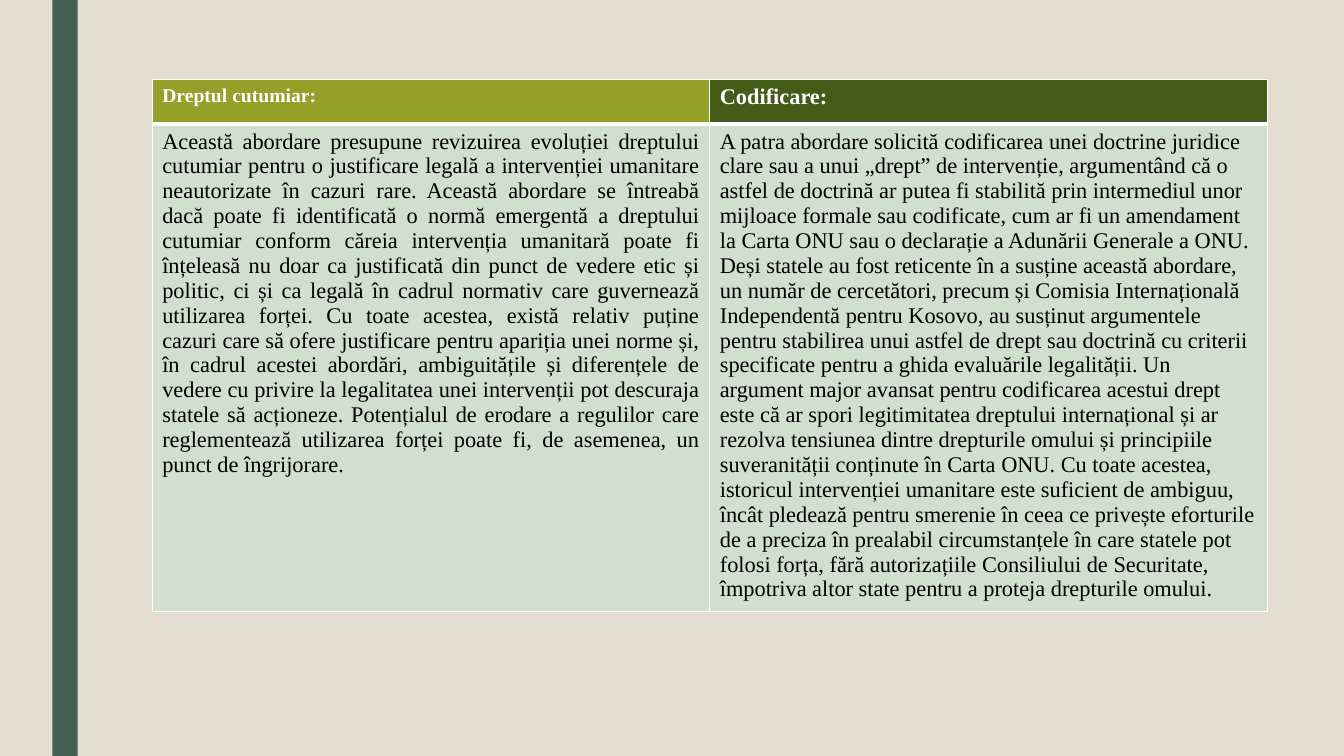
"""Build a slide that compares customary law and codification in a two-column table."""
from dataclasses import dataclass

from lxml.etree import SubElement
from pptx import Presentation
from pptx.dml.color import RGBColor
from pptx.enum.shapes import MSO_SHAPE as Shape
from pptx.enum.text import PP_ALIGN as Align
from pptx.oxml.ns import qn
from pptx.util import Inches, Pt

FONT = "Times New Roman"
WHITE = "FFFFFF"
BLACK = "000000"
BODY_FILL = "D1DFCE"
BODY_SIZE = 16
COLUMN_WIDTH = 5.53
ROW_HEIGHTS = (0.44, 4.84)


@dataclass
class Approach:
    heading: str
    heading_size: int
    heading_fill: str
    body_align: Align
    sentences: list[str]


APPROACHES = [
    Approach("Dreptul cutumiar:", 14, "94A027", Align.JUSTIFY, [
        "Această abordare presupune revizuirea evoluției dreptului cutumiar pentru o "
        "justificare legală a intervenției umanitare neautorizate în cazuri rare.",
        "Această abordare se întreabă dacă poate fi identificată o normă emergentă a dreptului "
        "cutumiar conform căreia intervenția umanitară poate fi înțeleasă nu doar ca "
        "justificată din punct de vedere etic și politic, ci și ca legală în cadrul normativ "
        "care guvernează utilizarea forței.",
        "Cu toate acestea, există relativ puține cazuri care să ofere justificare pentru "
        "apariția unei norme și, în cadrul acestei abordări, ambiguitățile și diferențele de "
        "vedere cu privire la legalitatea unei intervenții pot descuraja statele să acționeze.",
        "Potențialul de erodare a regulilor care reglementează utilizarea forței poate fi, de "
        "asemenea, un punct de îngrijorare.",
    ]),
    Approach("Codificare:", 16, "455C19", Align.LEFT, [
        "A patra abordare solicită codificarea unei doctrine juridice clare sau a unui "
        "„drept” de intervenție, argumentând că o astfel de doctrină ar putea fi stabilită "
        "prin intermediul unor mijloace formale sau codificate, cum ar fi un amendament la "
        "Carta ONU sau o declarație a Adunării Generale a ONU.",
        "Deși statele au fost reticente în a susține această abordare, un număr de "
        "cercetători, precum și Comisia Internațională Independentă pentru Kosovo, au susținut "
        "argumentele pentru stabilirea unui astfel de drept sau doctrină cu criterii "
        "specificate pentru a ghida evaluările legalității.",
        "Un argument major avansat pentru codificarea acestui drept este că ar spori "
        "legitimitatea dreptului internațional și ar rezolva tensiunea dintre drepturile "
        "omului și principiile suveranității conținute în Carta ONU.",
        "Cu toate acestea, istoricul intervenției umanitare este suficient de ambiguu, încât "
        "pledează pentru smerenie în ceea ce privește eforturile de a preciza în prealabil "
        "circumstanțele în care statele pot folosi forța, fără autorizațiile Consiliului de "
        "Securitate, împotriva altor state pentru a proteja drepturile omului.",
    ]),
]


def paint(fill, color: str) -> None:
    fill.solid()
    fill.fore_color.rgb = RGBColor.from_string(color)


def set_borders(cell, top: int, bottom: int) -> None:
    properties = cell._tc.get_or_add_tcPr()
    widths = {"a:lnL": 1, "a:lnR": 1, "a:lnT": top, "a:lnB": bottom}
    for tag, width in widths.items():
        line = SubElement(properties, qn(tag), w=str(Pt(width)))
        fill = SubElement(line, qn("a:solidFill"))
        SubElement(fill, qn("a:srgbClr"), val=WHITE)


def fill_cell(cell, text: str, size: int, color: str, fill: str,
              bold: bool, align: Align) -> None:
    paint(cell.fill, fill)
    cell.text_frame.text = text
    para = cell.text_frame.paragraphs[0]
    para.alignment = align
    font = para.runs[0].font
    font.name, font.size, font.bold = FONT, Pt(size), bold
    font.color.rgb = RGBColor.from_string(color)


def add_side_bar(page) -> None:
    bar = page.shapes.add_shape(Shape.RECTANGLE, Inches(0.52), 0, Inches(0.25), Inches(7.5))
    bar.shadow.inherit = False
    paint(bar.fill, "455F51")
    bar.line.fill.background()


def add_approaches(page) -> None:
    table = page.shapes.add_table(
        len(ROW_HEIGHTS), len(APPROACHES), Inches(1.51), Inches(0.79),
        Inches(COLUMN_WIDTH * len(APPROACHES)), Inches(sum(ROW_HEIGHTS))).table
    for row, height in zip(table.rows, ROW_HEIGHTS):
        row.height = Inches(height)
    for index, approach in enumerate(APPROACHES):
        table.columns[index].width = Inches(COLUMN_WIDTH)
        heading, body = table.cell(0, index), table.cell(1, index)
        set_borders(heading, top=1, bottom=3)
        set_borders(body, top=3, bottom=1)
        fill_cell(heading, approach.heading, approach.heading_size, WHITE,
                  approach.heading_fill, True, Align.LEFT)
        fill_cell(body, " ".join(approach.sentences), BODY_SIZE, BLACK, BODY_FILL,
                  False, approach.body_align)


def main() -> None:
    deck = Presentation()
    deck.slide_width, deck.slide_height = Inches(13.33), Inches(7.5)
    page = deck.slides.add_slide(deck.slide_layouts[6])
    paint(page.background.fill, "E3DED1")
    add_side_bar(page)
    add_approaches(page)
    deck.save("out.pptx")


if __name__ == "__main__":
    main()
